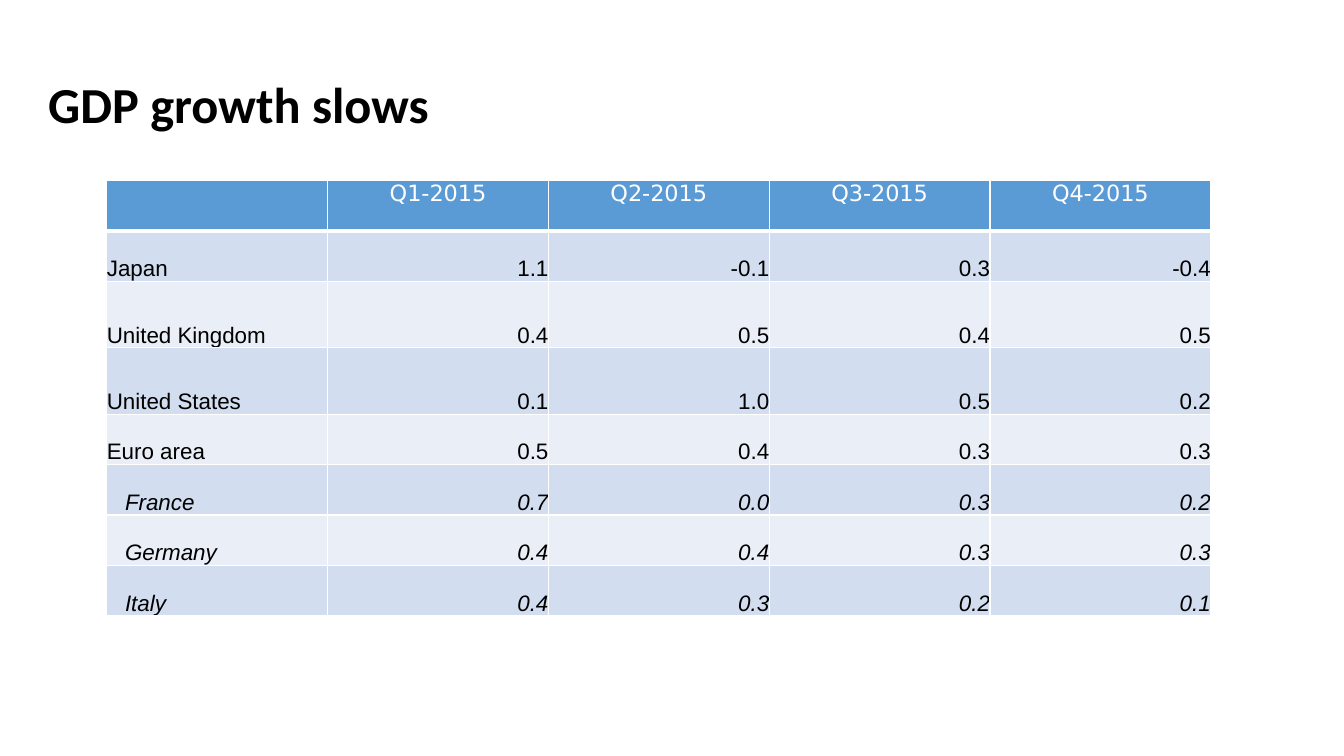
from dataclasses import dataclass

from lxml import etree
from pptx import Presentation
from pptx import util as u
from pptx.dml.color import RGBColor
from pptx.enum import text
from pptx.oxml import ns

COLORS = {
    "header": "5B9BD5",
    "band_dark": "D2DEEF",
    "band_light": "EAEFF7",
    "white": "FFFFFF",
    "black": "000000",
}
COLUMN_WIDTH = 2.19
MEMBER_INDENT = 0.18


@dataclass(frozen=True)
class TextStyle:
    font: str
    size: int
    color: str
    bold: bool = False
    italic: bool = False


@dataclass(frozen=True)
class Economy:
    name: str
    growth: tuple[str, ...]
    height: float = 0.5
    euro_member: bool = False


TITLE_STYLE = TextStyle("Calibri", 36, "black", bold=True)
HEADER_STYLE = TextStyle("DejaVu Sans", 16, "white")
BODY_STYLE = TextStyle("Arial", 16, "black")
MEMBER_STYLE = TextStyle("Arial", 16, "black", italic=True)

QUARTERS = [f"Q{quarter}-2015" for quarter in range(1, 5)]
ECONOMIES = [
    Economy("Japan", ("1.1", "-0.1", "0.3", "-0.4")),
    Economy("United Kingdom", ("0.4", "0.5", "0.4", "0.5"), height=0.66),
    Economy("United States", ("0.1", "1.0", "0.5", "0.2"), height=0.66),
    Economy("Euro area", ("0.5", "0.4", "0.3", "0.3")),
    Economy("France", ("0.7", "0.0", "0.3", "0.2"), euro_member=True),
    Economy("Germany", ("0.4", "0.4", "0.3", "0.3"), euro_member=True),
    Economy("Italy", ("0.4", "0.3", "0.2", "0.1"), euro_member=True),
]


def add_run(paragraph, content: str, style: TextStyle) -> None:
    run = paragraph.add_run()
    run.text = content
    run.font.name = style.font
    run.font.size = u.Pt(style.size)
    run.font.bold = style.bold
    run.font.italic = style.italic
    run.font.color.rgb = RGBColor.from_string(COLORS[style.color])


def set_borders(cell, bottom_points: int) -> None:
    properties = cell._tc.get_or_add_tcPr()
    for position, side in enumerate("LRTB"):
        points = bottom_points if side == "B" else 1
        line = etree.Element(ns.qn(f"a:ln{side}"), w=str(u.Pt(points)))
        fill = etree.SubElement(line, ns.qn("a:solidFill"))
        etree.SubElement(fill, ns.qn("a:srgbClr"), val=COLORS["white"])
        properties.insert(position, line)


def fill_cell(cell, content: str, style: TextStyle, fill: str,
              alignment, anchor, indent: float = 0, bottom_points: int = 1) -> None:
    cell.margin_left = u.Inches(indent)
    cell.margin_right = cell.margin_top = cell.margin_bottom = u.Inches(0)
    cell.vertical_anchor = anchor
    cell.fill.solid()
    cell.fill.fore_color.rgb = RGBColor.from_string(COLORS[fill])
    set_borders(cell, bottom_points)
    paragraph = cell.text_frame.paragraphs[0]
    paragraph.alignment = alignment
    if content:
        add_run(paragraph, content, style)


def add_title(slide, content: str) -> None:
    shape = slide.shapes.add_textbox(
        u.Inches(0.38), u.Inches(0.34), u.Inches(11.5), u.Inches(1.45))
    frame = shape.text_frame
    frame.word_wrap = True
    frame.vertical_anchor = text.MSO_ANCHOR.MIDDLE
    paragraph = frame.paragraphs[0]
    paragraph.line_spacing = 0.9
    add_run(paragraph, content, TITLE_STYLE)


def add_growth_table(slide) -> None:
    heights = [0.5] + [economy.height for economy in ECONOMIES]
    columns = len(QUARTERS) + 1
    table = slide.shapes.add_table(
        len(heights), columns, u.Inches(1.06), u.Inches(1.79),
        u.Inches(COLUMN_WIDTH * columns), u.Inches(sum(heights))).table
    for column in table.columns:
        column.width = u.Inches(COLUMN_WIDTH)
    for row, height in zip(table.rows, heights):
        row.height = u.Inches(height)

    for column, heading in enumerate(["", *QUARTERS]):
        fill_cell(table.cell(0, column), heading, HEADER_STYLE, "header",
                  text.PP_ALIGN.CENTER, text.MSO_ANCHOR.TOP, bottom_points=3)

    for row, economy in enumerate(ECONOMIES, start=1):
        style = MEMBER_STYLE if economy.euro_member else BODY_STYLE
        band = "band_dark" if row % 2 else "band_light"
        indent = MEMBER_INDENT if economy.euro_member else 0
        fill_cell(table.cell(row, 0), economy.name, style, band,
                  text.PP_ALIGN.LEFT, text.MSO_ANCHOR.BOTTOM, indent)
        for column, value in enumerate(economy.growth, start=1):
            fill_cell(table.cell(row, column), value, style, band,
                      text.PP_ALIGN.RIGHT, text.MSO_ANCHOR.BOTTOM)


def main() -> None:
    presentation = Presentation()
    presentation.slide_width = u.Inches(13.33)
    presentation.slide_height = u.Inches(7.5)
    slide = presentation.slides.add_slide(presentation.slide_layouts[6])
    add_title(slide, "GDP growth slows")
    add_growth_table(slide)
    presentation.save("out.pptx")


if __name__ == "__main__":
    main()
